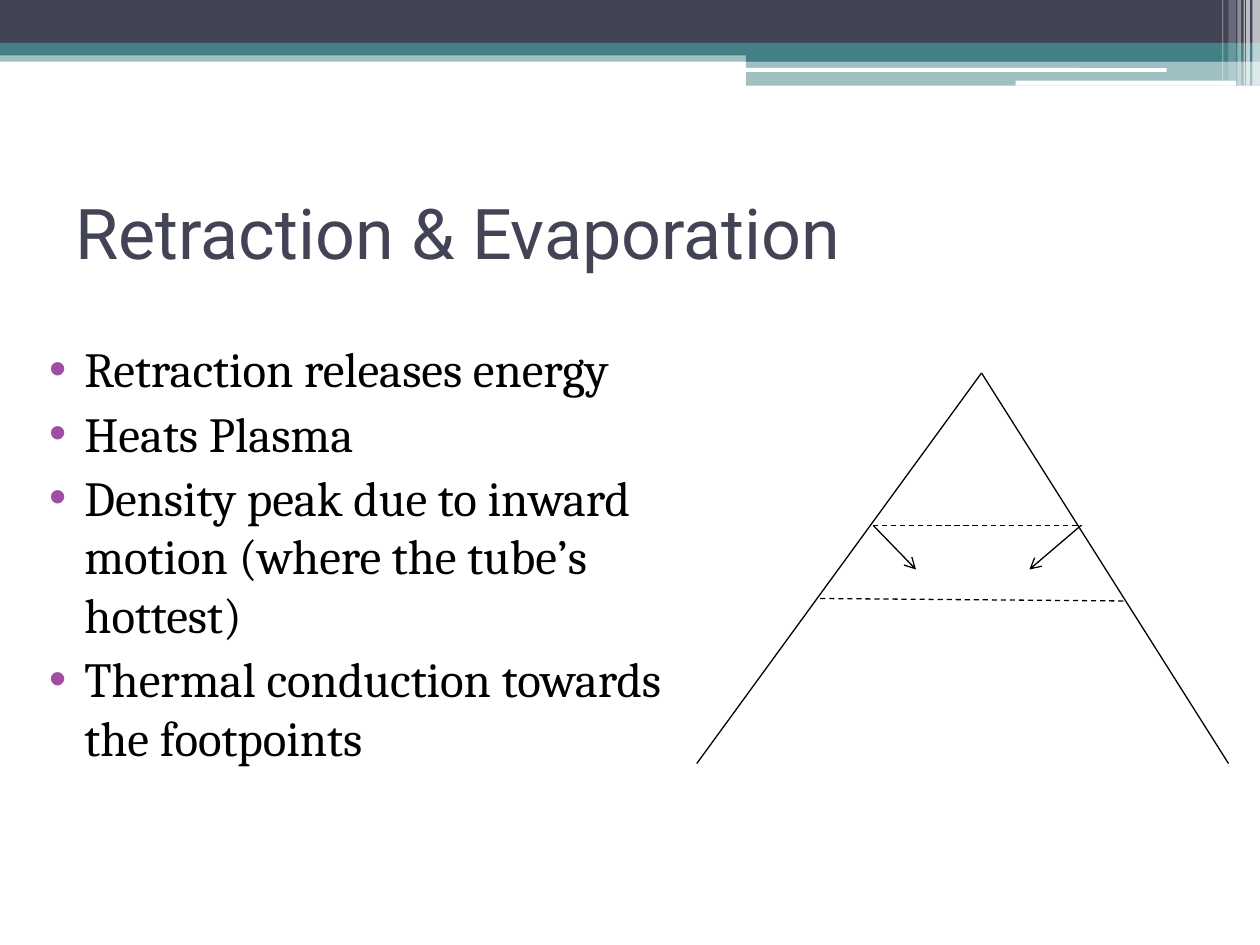
import dataclasses

import lxml.etree
import pptx
import pptx.dml.color
import pptx.enum.dml
import pptx.enum.shapes
import pptx.enum.text
import pptx.oxml
import pptx.oxml.ns
import pptx.util

COLORS = {
    "navy": "424456",
    "teal": "438086",
    "white": "FFFFFF",
    "black": "000000",
    "bullet": "A04DA3",
}
RECTANGLE = pptx.enum.shapes.MSO_SHAPE.RECTANGLE
ROUNDED = pptx.enum.shapes.MSO_SHAPE.ROUNDED_RECTANGLE

# The slide is a grid of 100 columns by 75 rows
COLUMNS, ROWS = 100, 75
SLIDE_WIDTH = pptx.util.Inches(10)
SLIDE_HEIGHT = pptx.util.Inches(7.5)


@dataclasses.dataclass
class Band:
    left: float
    top: float
    width: float
    height: float
    color: str
    opacity: int = 100
    kind: int = RECTANGLE


@dataclasses.dataclass
class Segment:
    start: tuple[float, float]
    end: tuple[float, float]
    dashed: bool = False
    arrow: bool = False


BANDS = [
    Band(0, 4, 100, 0.9, "teal", 50),
    Band(0, 0, 100, 3.4, "navy"),
    Band(0, 3.4, 100, 1, "teal"),
    Band(59.2, 3.9, 40.8, 1, "teal"),
    Band(59.2, 4.8, 40.8, 2, "teal", 50),
    Band(59.1, 5.4, 33.5, 0.3, "white", kind=ROUNDED),
    Band(80.6, 6.4, 17.5, 0.4, "white", kind=ROUNDED),
]
# Pale stripes at the right edge: left, width, height, opacity
STRIPES = [
    Band(left, 0, width, height, "white", opacity)
    for left, width, height, opacity in [
        (99.4, 0.6, 6.8, 65),
        (98.9, 0.3, 6.8, 65),
        (98.7, 0.1, 6.8, 60),
        (98.2, 0.3, 6.8, 40),
        (97.5, 0.6, 6.4, 20),
        (97, 0.1, 6.4, 30),
    ]
]

# Flux tube: apex, footpoints and the ends of the upper front
APEX, LEFT_FOOT, RIGHT_FOOT = (77.9, 29.6), (55.3, 60.6), (97.5, 60.6)
LEFT_BEND, RIGHT_BEND = (69.3, 41.7), (85.8, 41.7)
SEGMENTS = [
    Segment(LEFT_FOOT, APEX),
    Segment(APEX, RIGHT_FOOT),
    Segment(LEFT_BEND, RIGHT_BEND, dashed=True),
    Segment((65.1, 47.5), (89.4, 47.7), dashed=True),
    Segment(LEFT_BEND, (72.7, 45.2), arrow=True),
    Segment(RIGHT_BEND, (81.7, 45.2), arrow=True),
]

POINTS = [
    "Retraction releases energy",
    "Heats Plasma",
    "Density peak due to inward motion (where the tube’s hottest)",
    "Thermal conduction towards the footpoints",
]


def x(columns: float) -> int:
    return round(SLIDE_WIDTH * columns / COLUMNS)


def y(rows: float) -> int:
    return round(SLIDE_HEIGHT * rows / ROWS)


def rgb(name: str) -> pptx.dml.color.RGBColor:
    return pptx.dml.color.RGBColor.from_string(COLORS[name])


def add_element(parent, tag: str, **attributes: str):
    element = lxml.etree.SubElement(parent, pptx.oxml.ns.qn(tag))
    for name, value in attributes.items():
        element.set(name, value)
    return element


def draw_band(slide, band: Band) -> None:
    shape = slide.shapes.add_shape(
        band.kind, x(band.left), y(band.top), x(band.width), y(band.height)
    )
    shape.shadow.inherit = False
    shape.line.fill.background()
    shape.fill.solid()
    shape.fill.fore_color.rgb = rgb(band.color)
    if band.opacity < 100:
        color = shape.fill._xPr.find(".//" + pptx.oxml.ns.qn("a:srgbClr"))
        add_element(color, "a:alpha", val=str(band.opacity * 1000))


def draw_segment(group, segment: Segment) -> None:
    connector = group.shapes.add_connector(
        pptx.enum.shapes.MSO_CONNECTOR.STRAIGHT,
        x(segment.start[0]), y(segment.start[1]),
        x(segment.end[0]), y(segment.end[1]),
    )
    connector.line.color.rgb = rgb("black")
    connector.line.width = pptx.util.Pt(0.75)
    if segment.dashed:
        connector.line.dash_style = pptx.enum.dml.MSO_LINE.DASH
    if segment.arrow:
        add_element(connector.line._get_or_add_ln(), "a:tailEnd", type="arrow")
    add_element(connector._element.spPr, "a:effectLst")


def place(shape, left: float, top: float, width: float, height: float) -> None:
    shape.left, shape.top = x(left), y(top)
    shape.width, shape.height = x(width), y(height)


def write_text(shape, lines: list[str], *, font: str, size: float, color: str,
               anchor, bullet: str = "", space_before: float = 0) -> None:
    frame = shape.text_frame
    frame.word_wrap = True
    frame.auto_size = pptx.enum.text.MSO_AUTO_SIZE.NONE
    frame.vertical_anchor = anchor
    frame.text = "\n".join(lines)
    for paragraph in frame.paragraphs:
        paragraph.alignment = pptx.enum.text.PP_ALIGN.LEFT
        paragraph.space_before = pptx.util.Pt(space_before)
        paragraph.font.name = font
        paragraph.font.size = pptx.util.Pt(size)
        paragraph.font.color.rgb = rgb(color)
        for run in paragraph.runs:
            run.font.name = font
            run.font.size = pptx.util.Pt(size)
            run.font.color.rgb = rgb(color)
        if bullet:
            properties = paragraph._p.get_or_add_pPr()
            properties.set("marL", str(x(4)))
            properties.set("indent", str(x(-2.8)))
            bullet_color = add_element(properties, "a:buClr")
            add_element(bullet_color, "a:srgbClr", val=COLORS["bullet"])
            add_element(properties, "a:buFont", typeface="Arial")
            add_element(properties, "a:buChar", char=bullet)


def main() -> None:
    presentation = pptx.Presentation()
    presentation.slide_width = SLIDE_WIDTH
    presentation.slide_height = SLIDE_HEIGHT
    slide = presentation.slides.add_slide(presentation.slide_layouts[1])

    # Header decoration
    for band in BANDS + STRIPES:
        draw_band(slide, band)

    # Title and list
    title, body = slide.shapes.title, slide.placeholders[1]
    place(title, 5, 12.5, 90, 11.7)
    write_text(title, ["Retraction & Evaporation"], font="Roboto", size=40,
               color="navy", anchor=pptx.enum.text.MSO_ANCHOR.MIDDLE)
    place(body, 1.7, 26.4, 53.7, 42.3)
    write_text(body, POINTS, font="Cambria", size=28, color="black",
               anchor=pptx.enum.text.MSO_ANCHOR.TOP, bullet="•", space_before=3)

    # Flux tube diagram
    diagram = slide.shapes.add_group_shape()
    for segment in SEGMENTS:
        draw_segment(diagram, segment)

    presentation.save("out.pptx")


if __name__ == "__main__":
    main()
